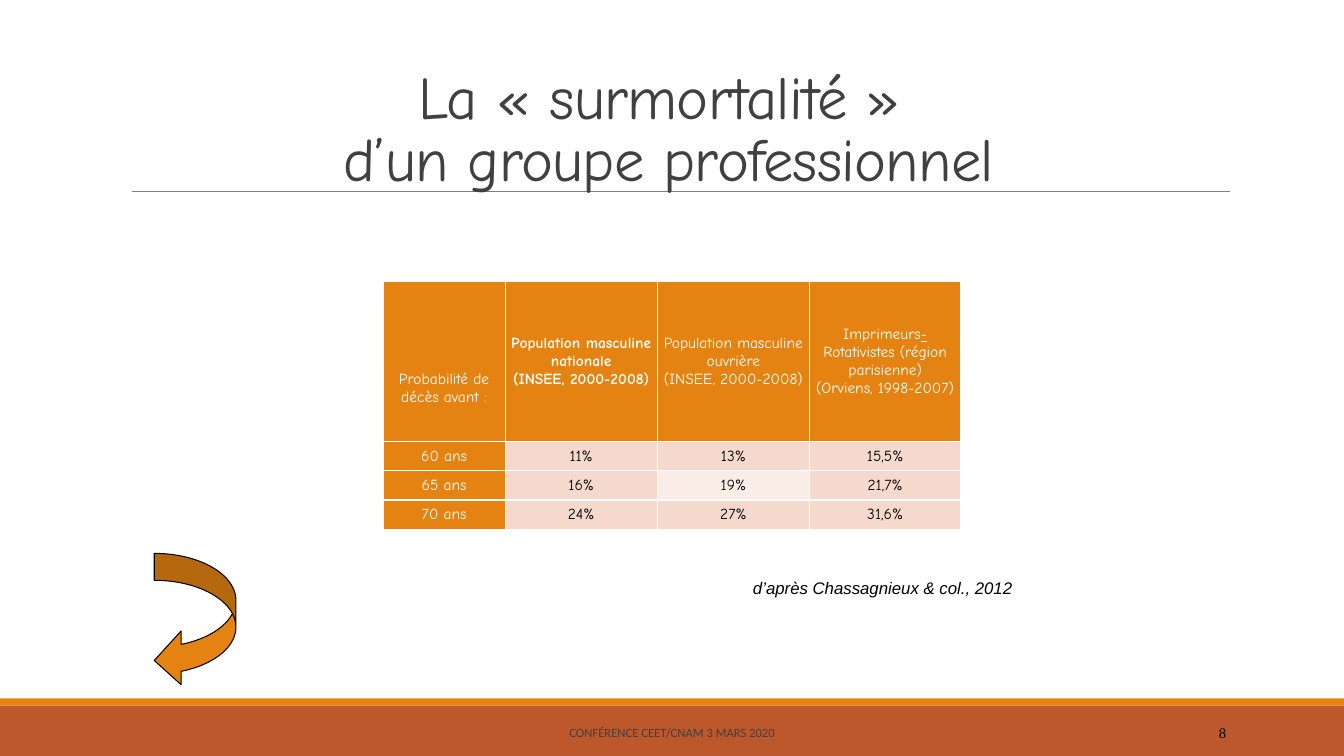
from lxml import etree
from pptx import Presentation, util as u
from pptx.dml.color import RGBColor
from pptx.enum import shapes, text
from pptx.oxml.ns import qn

SCALE = 9144
ORANGE, RUST, PINK, PALE = "E48312", "BD582C", "F5D9CC", "FAEDE7"
WHITE, BLACK, GREY = "FFFFFF", "000000", "404040"
LEFT, CENTER, RIGHT = text.PP_ALIGN.LEFT, text.PP_ALIGN.CENTER, text.PP_ALIGN.RIGHT
TOP, MIDDLE, BOTTOM = text.MSO_ANCHOR.TOP, text.MSO_ANCHOR.MIDDLE, text.MSO_ANCHOR.BOTTOM

TITLE = "La «\u00a0surmortalité\u00a0» \vd’un groupe professionnel"
SOURCE = "d’après Chassagnieux & col., 2012"
FOOTER = "CONFÉRENCE CEET/CNAM 3 MARS 2020"
PAGE = "8"
ROWS = [
    ["Probabilité de décès avant :",
     "Population masculine nationale\n(INSEE, 2000-2008)",
     "Population masculine ouvrière\n(INSEE, 2000-2008)",
     "Imprimeurs|-| Rotativistes (région parisienne)\n(Orviens, 1998-2007)"],
    ["60 ans", "11%", "13%", "15,5%"],
    ["65 ans", "16%", "19%", "21,7%"],
    ["70 ans", "24%", "27%", "31,6%"],
]
COL_WIDTHS = [121, 151, 151, 150]
ROW_HEIGHTS = [159, 29, 29, 29]
BOLD_CELL, PALE_CELL = (0, 1), (2, 2)


def px(n):
    return u.Emu(n * SCALE)


def rgb(color):
    return RGBColor.from_string(color)


def style(p, font, size, color, align, bold=False, italic=False):
    p.alignment = align
    f = p.font
    f.name, f.size, f.bold, f.italic = font, u.Pt(size), bold, italic
    f.color.rgb = rgb(color)


def add_shape(s, kind, box, fill, line=None):
    sp = s.shapes.add_shape(kind, *map(px, box))
    sp.shadow.inherit = False
    sp.fill.solid()
    sp.fill.fore_color.rgb = rgb(fill)
    if line:
        sp.line.color.rgb = rgb(line)
        sp.line.width = u.Pt(0.75)
    else:
        sp.line.fill.background()
    return sp


def add_text(s, box, words, font, size, color, align, anchor, italic=False):
    tf = s.shapes.add_textbox(*map(px, box)).text_frame
    tf.word_wrap = True
    tf.vertical_anchor = anchor
    p = tf.paragraphs[0]
    p.text = words
    style(p, font, size, color, align, italic=italic)
    return p


def add_borders(cell):
    tc_pr = cell._tc.get_or_add_tcPr()
    for i, side in enumerate(("lnL", "lnR", "lnT", "lnB")):
        ln = etree.Element(qn("a:" + side), w=str(u.Pt(1)))
        fill = etree.SubElement(ln, qn("a:solidFill"))
        etree.SubElement(fill, qn("a:srgbClr"), val=WHITE)
        tc_pr.insert(i, ln)


def fill_cell(cell, words, row, col):
    heading = row == 0 or col == 0
    cell.fill.solid()
    cell.fill.fore_color.rgb = rgb(
        ORANGE if heading else PALE if (row, col) == PALE_CELL else PINK)
    cell.vertical_anchor = MIDDLE
    cell.margin_left = cell.margin_right = px(4)
    cell.margin_top = px(54 if row == col == 0 else 0)
    cell.margin_bottom = 0
    tf = cell.text_frame
    for i, line in enumerate(words.split("\n")):
        p = tf.add_paragraph() if i else tf.paragraphs[0]
        for j, part in enumerate(line.split("|")):
            r = p.add_run()
            r.text = part
            if j == 1:
                r.font.underline = True
        style(p, "Comic Neue", 11, WHITE if heading else BLACK, CENTER,
              bold=(row, col) == BOLD_CELL)
    add_borders(cell)


def add_mortality_table(s):
    tbl = s.shapes.add_table(len(ROWS), len(COL_WIDTHS), px(380), px(279),
                             px(sum(COL_WIDTHS)), px(sum(ROW_HEIGHTS))).table
    tbl.first_row = tbl.horz_banding = False
    for column, width in zip(tbl.columns, COL_WIDTHS):
        column.width = px(width)
    for row, height in zip(tbl.rows, ROW_HEIGHTS):
        row.height = px(height)
    for i, row in enumerate(ROWS):
        for j, words in enumerate(row):
            fill_cell(tbl.cell(i, j), words, i, j)


def main():
    prs = Presentation()
    prs.slide_width, prs.slide_height = u.Inches(13.33), u.Inches(7.5)
    s = prs.slides.add_slide(prs.slide_layouts[6])

    add_shape(s, shapes.MSO_SHAPE.RECTANGLE, (0, 700, 1333, 50), RUST)
    add_shape(s, shapes.MSO_SHAPE.RECTANGLE, (0, 693, 1333, 7), ORANGE)
    rule = s.shapes.add_connector(shapes.MSO_CONNECTOR.STRAIGHT,
                                  *map(px, (131, 190, 1220, 190)))
    rule.line.color.rgb = rgb("808080")
    rule.line.width = u.Pt(0.5)
    etree.SubElement(rule._element.spPr, qn("a:effectLst"))

    p = add_text(s, (326, 104, 675, 93), TITLE, "Comic Neue", 43.2, GREY, CENTER, BOTTOM)
    p.line_spacing = 0.85
    for r in p.runs:
        r._r.get_or_add_rPr().set("spc", "-50")

    add_mortality_table(s)
    add_text(s, (426, 707, 481, 40), FOOTER, "Calibri", 9, GREY, CENTER, MIDDLE)
    add_text(s, (1083, 707, 143, 40), PAGE, "Times New Roman", 10.5, BLACK, RIGHT, MIDDLE)
    add_text(s, (737, 568, 320, 30), SOURCE, "Arial", 12, BLACK, LEFT, TOP, italic=True)

    arrow = add_shape(s, shapes.MSO_SHAPE.CURVED_LEFT_ARROW, (153, 549, 81, 133), ORANGE, BLACK)
    for i, value in enumerate((0.33, 0.66, 0.33)):
        arrow.adjustments[i] = value

    prs.save("out.pptx")


if __name__ == "__main__":
    main()
